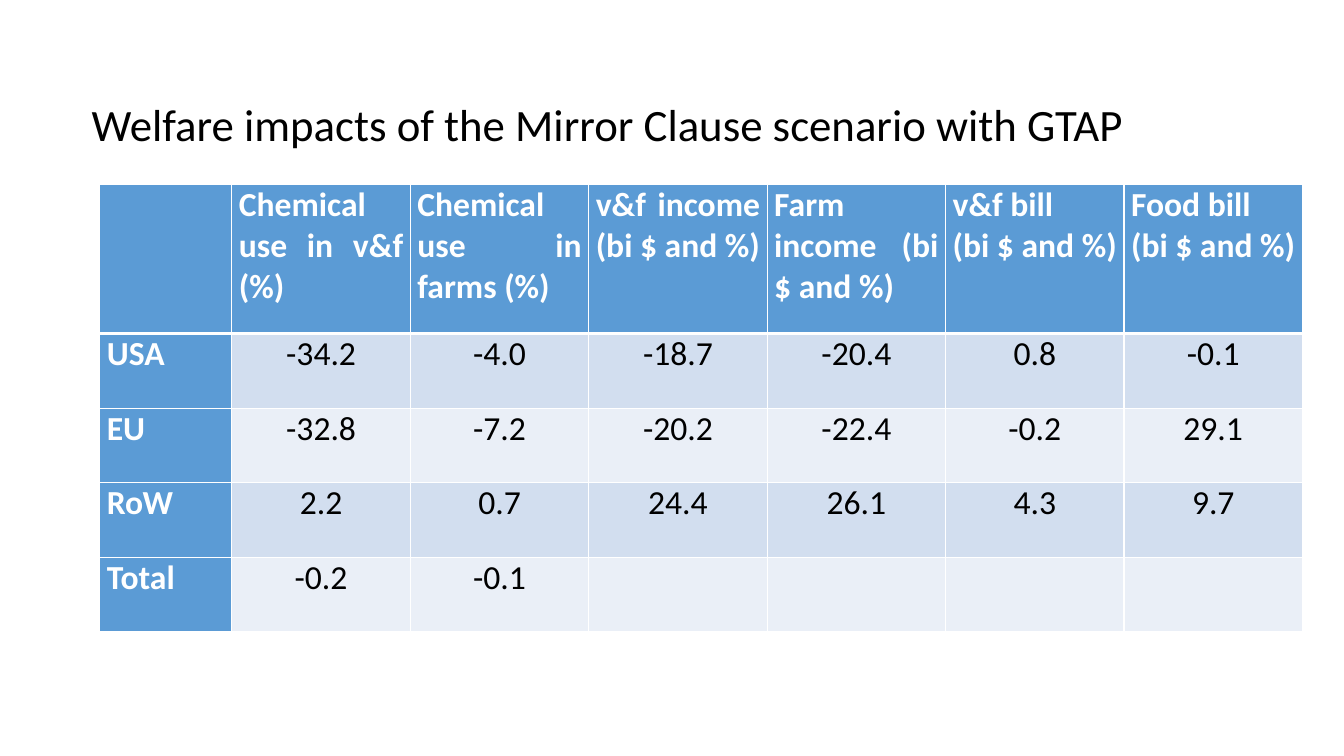
from dataclasses import dataclass

import lxml.etree
import pptx
import pptx.dml.color
import pptx.enum.text
import pptx.oxml.ns
import pptx.presentation
import pptx.slide
import pptx.table
import pptx.util

RGB = pptx.dml.color.RGBColor
ALIGN = pptx.enum.text.PP_ALIGN
Inches = pptx.util.Inches

BLUE = RGB(0x5B, 0x9B, 0xD5)
MID = RGB(0xD2, 0xDE, 0xEF)
PALE = RGB(0xEA, 0xEF, 0xF7)
WHITE = RGB(0xFF, 0xFF, 0xFF)
BLACK = RGB(0x00, 0x00, 0x00)
FONT = "Calibri"

# Grid: one label column, equal value columns; the header is two rows high
WIDE, HIGH = 13.33, 7.5
LEFT, TOP = 0.99, 1.83
LABEL, COL, ROW = 1.31, 1.77, 0.74


@dataclass(frozen=True)
class Style:
    align: ALIGN
    color: RGB
    bold: bool = False
    size: int = 24


@dataclass(frozen=True)
class Region:
    name: str
    values: tuple[str, ...]


TITLE = Style(ALIGN.LEFT, BLACK, size=32)
HEAD = Style(ALIGN.JUSTIFY, WHITE, bold=True)
BODY = Style(ALIGN.CENTER, BLACK)

HEADS = (
    "Chemical use in v&f (%)",
    "Chemical use in farms (%)",
    "v&f income (bi $ and %)",
    "Farm income (bi $ and %)",
    "v&f bill\n(bi $ and %)",
    "Food bill\n(bi $ and %)",
)
REGIONS = (
    Region("USA", ("-34.2", "-4.0", "-18.7", "-20.4", "0.8", "-0.1")),
    Region("EU", ("-32.8", "-7.2", "-20.2", "-22.4", "-0.2", "29.1")),
    Region("RoW", ("2.2", "0.7", "24.4", "26.1", "4.3", "9.7")),
    Region("Total", ("-0.2", "-0.1", "", "", "", "")),
)


def write(frame, text: str, style: Style) -> None:
    frame.text = text
    for par in frame.paragraphs:
        par.alignment = style.align
        par.font.size = pptx.util.Pt(style.size)
        for run in par.runs:
            run.font.name = FONT
            run.font.size = pptx.util.Pt(style.size)
            run.font.bold = style.bold
            run.font.color.rgb = style.color


def edge(cell, side: str, width: int) -> None:
    qn = pptx.oxml.ns.qn
    props = cell._tc.get_or_add_tcPr()
    line = lxml.etree.SubElement(props, qn(f"a:ln{side}"), w=str(pptx.util.Pt(width)))
    fill = lxml.etree.SubElement(line, qn("a:solidFill"))
    lxml.etree.SubElement(fill, qn("a:srgbClr"), val=str(WHITE))


def paint(table: pptx.table.Table, row: int, col: int, text: str) -> None:
    cell = table.cell(row, col)
    first = row == 0 or col == 0
    cell.margin_left = cell.margin_right = Inches(0.07)
    cell.margin_top = cell.margin_bottom = 0
    write(cell.text_frame, text, HEAD if first else BODY)
    # The line under the header is heavier
    heavy = {"T": 1, "B": 0}
    for side in "LRTB":
        edge(cell, side, 3 if heavy.get(side) == row else 1)
    cell.fill.solid()
    cell.fill.fore_color.rgb = BLUE if first else MID if row % 2 else PALE


def title(slide: pptx.slide.Slide) -> None:
    box = slide.shapes.add_textbox(Inches(0.81), Inches(0.91), Inches(11.61), Inches(0.64))
    box.text_frame.word_wrap = True
    write(box.text_frame, "Welfare impacts of the Mirror Clause scenario with GTAP", TITLE)


def grid(slide: pptx.slide.Slide) -> None:
    rows = [("", *HEADS)] + [(area.name, *area.values) for area in REGIONS]
    wide = [LABEL] + [COL] * len(HEADS)
    high = [2 * ROW] + [ROW] * len(REGIONS)
    table = slide.shapes.add_table(
        len(high), len(wide), Inches(LEFT), Inches(TOP), Inches(sum(wide)), Inches(sum(high))
    ).table
    for col, size in zip(table.columns, wide):
        col.width = Inches(size)
    for row, size in zip(table.rows, high):
        row.height = Inches(size)
    for row, texts in enumerate(rows):
        for col, text in enumerate(texts):
            paint(table, row, col, text)


def main() -> None:
    deck = pptx.Presentation()
    deck.slide_width, deck.slide_height = Inches(WIDE), Inches(HIGH)
    slide = deck.slides.add_slide(deck.slide_layouts[6])
    title(slide)
    grid(slide)
    deck.save("out.pptx")


if __name__ == "__main__":
    main()
